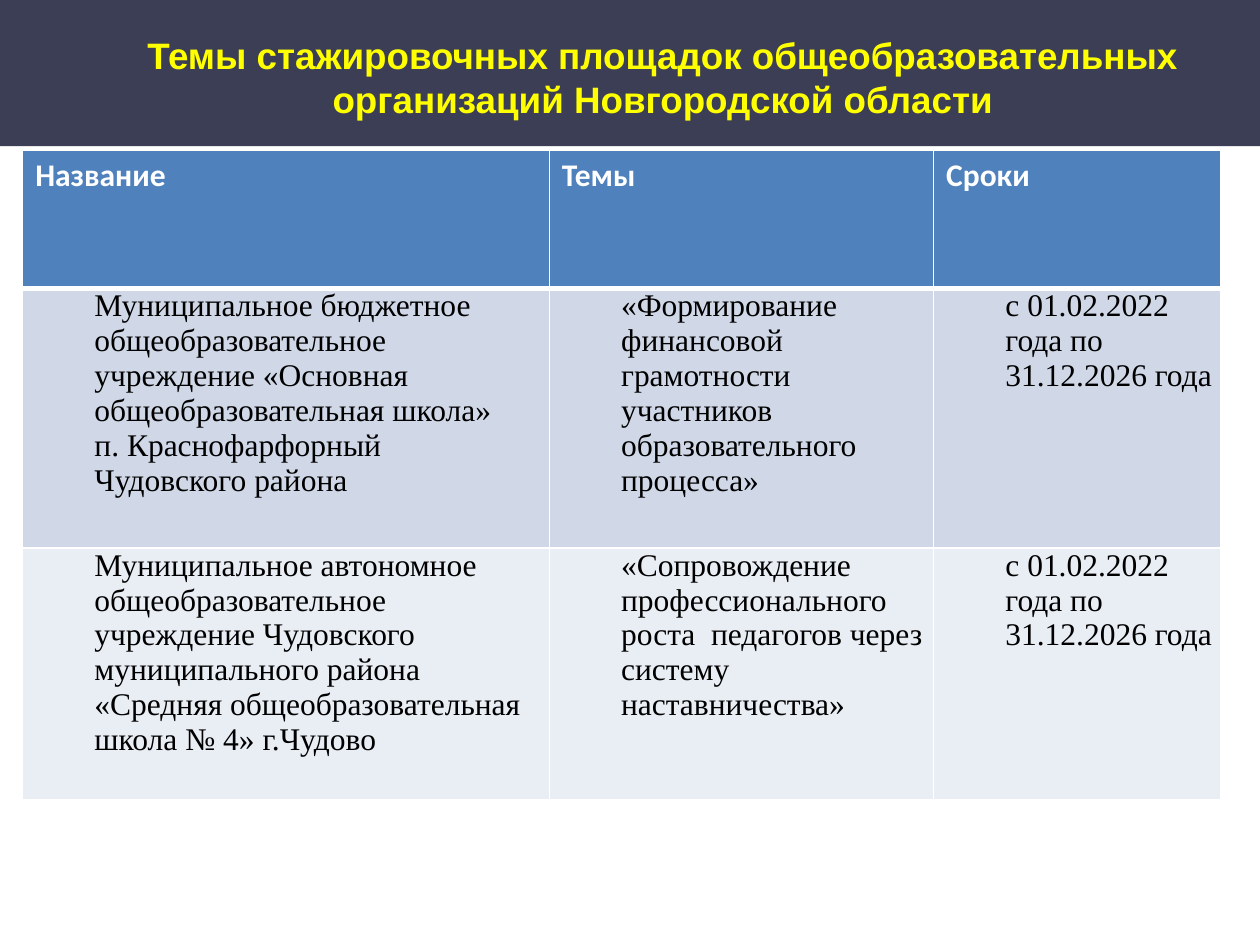
from dataclasses import dataclass

from lxml import etree
from pptx import Presentation
from pptx.dml.color import RGBColor
from pptx.enum import shapes, text
from pptx.oxml.ns import qn
from pptx.util import Inches, Pt


@dataclass(frozen=True)
class Theme:
    band: str = "3B3E54"
    title: str = "FFFF00"
    header: str = "4F81BD"
    rows: tuple = ("D0D8E8", "E9EDF4")
    white: str = "FFFFFF"
    ink: str = "000000"
    title_font: str = "Arial"
    header_font: str = "Calibri"
    body_font: str = "Times New Roman"
    title_size: int = 21
    table_size: int = 18


THEME = Theme()
TITLE = "Темы стажировочных площадок общеобразовательных организаций Новгородской области"
PERIOD = "с 01.02.2022 года по 31.12.2026 года"
COL_WIDTHS = (4.18, 3.05, 2.28)
ROW_HEIGHTS = (1.1, 2.06, 2)
ROWS = (
    ("Название", "Темы", "Сроки"),
    ("Муниципальное бюджетное общеобразовательное учреждение "
     "«Основная общеобразовательная школа»\nп. Краснофарфорный Чудовского района",
     "«Формирование финансовой грамотности участников образовательного процесса»",
     PERIOD),
    ("Муниципальное автономное общеобразовательное учреждение Чудовского "
     "муниципального района «Средняя общеобразовательная школа № 4» г.Чудово",
     "«Сопровождение профессионального роста  педагогов через систему наставничества»",
     PERIOD),
)


def format_runs(p, font, size, color, bold):
    for r in p.runs:
        r.font.name = font
        r.font.size = Pt(size)
        r.font.bold = bold
        r.font.color.rgb = RGBColor.from_string(color)


def set_borders(cell, bottom):
    """White lines round a cell; they must come before its fill."""
    tcPr = cell._tc.get_or_add_tcPr()
    for side, width in (("L", 1), ("R", 1), ("T", 1), ("B", bottom)):
        ln = etree.SubElement(tcPr, qn(f"a:ln{side}"), w=str(Pt(width)))
        fill = etree.SubElement(ln, qn("a:solidFill"))
        etree.SubElement(fill, qn("a:srgbClr"), val=THEME.white)


def add_band(slide, left, top, width, height):
    sp = slide.shapes.add_shape(shapes.MSO_SHAPE.RECTANGLE, left, top, width, height)
    sp.shadow.inherit = False
    sp.fill.solid()
    sp.fill.fore_color.rgb = RGBColor.from_string(THEME.band)
    sp.line.fill.background()
    # Keep the band behind the title
    slide.shapes._spTree.insert(2, sp._element)


def place_title(slide, left, top, width, height):
    sp = slide.shapes.title
    sp.left, sp.top, sp.width, sp.height = left, top, width, height
    tf = sp.text_frame
    tf.text = TITLE
    tf.word_wrap = True
    tf.auto_size = text.MSO_AUTO_SIZE.NONE
    tf.vertical_anchor = text.MSO_ANCHOR.TOP
    tf.margin_left = tf.margin_right = tf.margin_top = tf.margin_bottom = 0
    p = tf.paragraphs[0]
    p.alignment = text.PP_ALIGN.CENTER
    format_runs(p, THEME.title_font, THEME.title_size, THEME.title, True)


def fill_cell(cell, words, row):
    is_header = row == 0
    set_borders(cell, 3 if is_header else 1)
    cell.fill.solid()
    color = THEME.header if is_header else THEME.rows[(row - 1) % 2]
    cell.fill.fore_color.rgb = RGBColor.from_string(color)
    cell.text_frame.text = words
    if not is_header:
        cell.margin_left = cell.margin_right = Inches(0.07)
        cell.margin_top = cell.margin_bottom = 0
    for p in cell.text_frame.paragraphs:
        if is_header:
            format_runs(p, THEME.header_font, THEME.table_size, THEME.white, True)
        else:
            pPr = p._p.get_or_add_pPr()
            pPr.set("marL", str(Inches(0.5)))
            pPr.set("indent", "0")
            format_runs(p, THEME.body_font, THEME.table_size, THEME.ink, False)


def add_topics_table(slide, left, top, width, height):
    frame = slide.shapes.add_table(len(ROWS), len(COL_WIDTHS), left, top, width, height)
    table = frame.table
    for column, size in zip(table.columns, COL_WIDTHS):
        column.width = Inches(size)
    for row, size in zip(table.rows, ROW_HEIGHTS):
        row.height = Inches(size)
    for i, values in enumerate(ROWS):
        for j, words in enumerate(values):
            fill_cell(table.cell(i, j), words, i)


def main():
    prs = Presentation()
    prs.slide_width, prs.slide_height = Inches(10), Inches(7.5)
    slide = prs.slides.add_slide(prs.slide_layouts[5])
    # Heading
    add_band(slide, 0, 0, prs.slide_width, Inches(1.16))
    place_title(slide, Inches(0.58), Inches(0.26), Inches(9.36), Inches(1.06))
    # Topics by school
    add_topics_table(slide, Inches(0.18), Inches(1.19),
                     Inches(sum(COL_WIDTHS)), Inches(sum(ROW_HEIGHTS)))
    prs.save("out.pptx")


if __name__ == "__main__":
    main()
